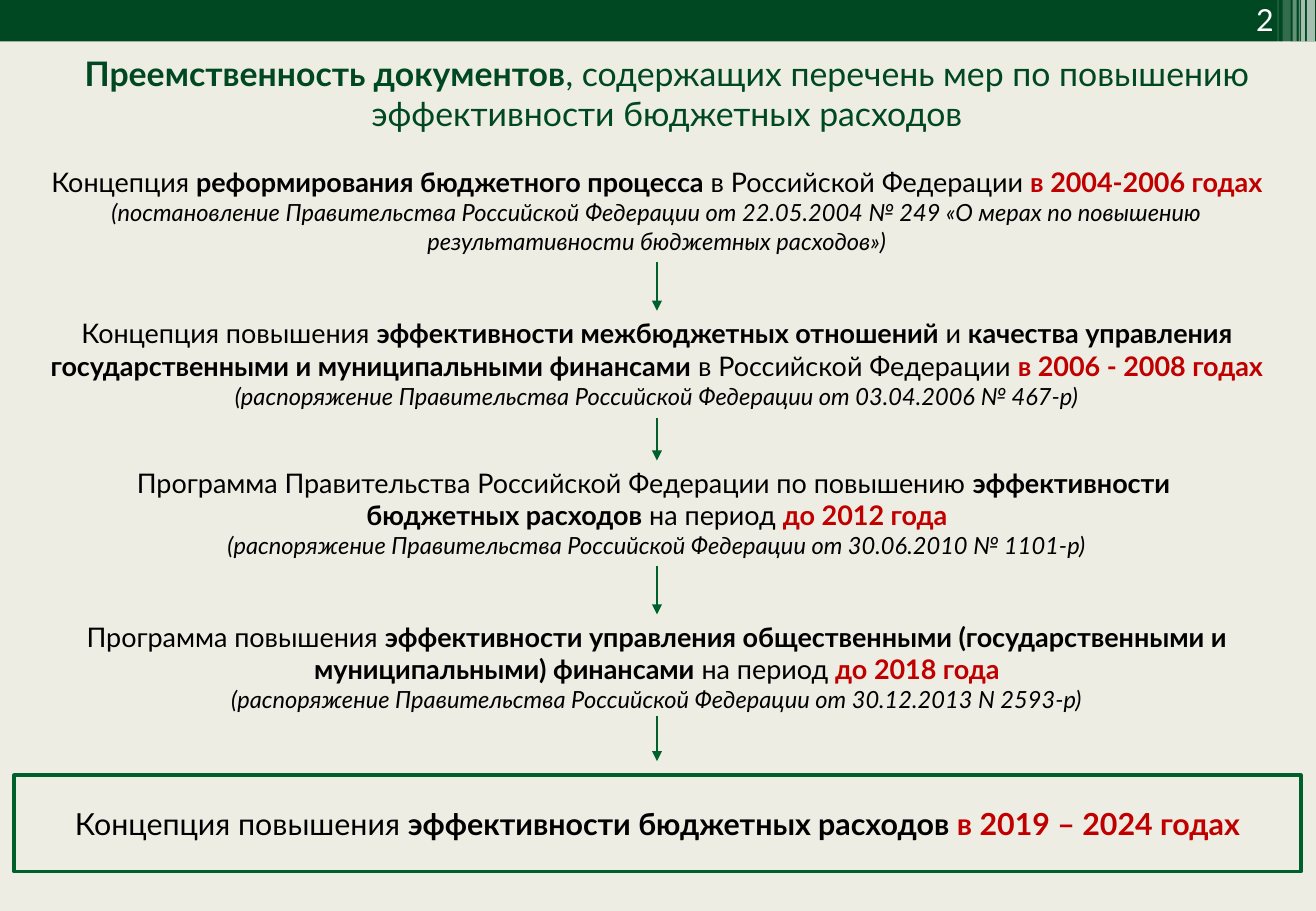
"""Build the slide on the succession of budget efficiency documents."""
import pptx
import pptx.dml.color
import pptx.enum.shapes
import pptx.enum.text
import pptx.oxml.ns
import pptx.util
from lxml import etree

PX = 7620
FONT = "Lato"
GREEN, LINE, BLACK, RED, WHITE = "004821", "00602B", "000000", "C00000", "FFFFFF"
ALIGN = pptx.enum.text.PP_ALIGN
ANCHOR = pptx.enum.text.MSO_ANCHOR
RECT = pptx.enum.shapes.MSO_SHAPE.RECTANGLE
qn = pptx.oxml.ns.qn


def rgb(value):
    return pptx.dml.color.RGBColor.from_string(value)


def write(tf, paragraphs, align=ALIGN.CENTER, anchor=ANCHOR.TOP):
    tf.word_wrap = True
    tf.auto_size = pptx.enum.text.MSO_AUTO_SIZE.NONE
    tf.vertical_anchor = anchor
    for i, (size, italic, runs) in enumerate(paragraphs):
        p = tf.add_paragraph() if i else tf.paragraphs[0]
        p.alignment = align
        for text, bold, color in runs:
            r = p.add_run()
            r.text = text
            r.font.name = FONT
            r.font.size = pptx.util.Pt(size)
            r.font.bold = bold
            r.font.italic = italic
            r.font.color.rgb = rgb(color)


prs = pptx.Presentation()
prs.slide_width, prs.slide_height = 1300 * PX, 900 * PX
s = prs.slides.add_slide(prs.slide_layouts[5])
s.background.fill.solid()
s.background.fill.fore_color.rgb = rgb("EDEDE3")

header = [
    (0, 1300, 41, GREEN, 100),
    (1291, 8, 41, WHITE, 65),
    (1285, 4, 41, WHITE, 65),
    (1283, 1, 41, WHITE, 60),
    (1277, 4, 41, WHITE, 40),
    (1267, 8, 43, WHITE, 20),
    (1262, 1, 43, WHITE, 30),
]
for x, w, h, color, opacity in header:
    sp = s.shapes.add_shape(RECT, x * PX, 0, w * PX, h * PX)
    sp.shadow.inherit = False
    sp.line.fill.background()
    sp.fill.solid()
    sp.fill.fore_color.rgb = rgb(color)
    if opacity < 100:
        clr = sp.fill._xPr.find(qn("a:solidFill"))[0]
        etree.SubElement(clr, qn("a:alpha")).set("val", str(opacity * 1000))

number = s.shapes.add_textbox(1162 * PX, -5 * PX, 108 * PX, 48 * PX)
write(number.text_frame, [(18, False, [("2", False, WHITE)])], ALIGN.RIGHT, ANCHOR.BOTTOM)

title = s.shapes.title
title.left, title.top, title.width, title.height = 16 * PX, 46 * PX, 1286 * PX, 92 * PX
write(title.text_frame, [(20, False, [
    ("Преемственность документов", True, GREEN),
    (", содержащих перечень мер по повышению эффективности бюджетных расходов", False, GREEN),
])])

documents = [
    (158, [
        (16, False, [
            ("Концепция ", False, BLACK),
            ("реформирования бюджетного процесса ", True, BLACK),
            ("в Российской Федерации ", False, BLACK),
            ("в 2004-2006 годах", True, RED),
        ]),
        (14, True, [("(постановление Правительства Российской Федерации от 22.05.2004 № 249 "
                     "«О мерах по повышению результативности бюджетных расходов»)", False, BLACK)]),
    ]),
    (307, [
        (16, False, [
            ("Концепция повышения ", False, BLACK),
            ("эффективности межбюджетных отношений ", True, BLACK),
            ("и ", False, BLACK),
            ("качества управления государственными и муниципальными финансами", True, BLACK),
            (" в Российской Федерации ", False, BLACK),
            ("в 2006 - 2008 годах", True, RED),
        ]),
        (14, True, [("(распоряжение Правительства Российской Федерации от 03.04.2006 № 467-р)",
                     False, BLACK)]),
    ]),
    (455, [
        (16, False, [
            ("Программа Правительства Российской Федерации по повышению ", False, BLACK),
            ("эффективности ", True, BLACK),
        ]),
        (16, False, [
            ("бюджетных расходов", True, BLACK),
            (" на период ", False, BLACK),
            ("до 2012 года", True, RED),
        ]),
        (14, True, [("(распоряжение Правительства Российской Федерации от 30.06.2010 № 1101-р)",
                     False, BLACK)]),
    ]),
    (607, [
        (16, False, [
            ("Программа повышения ", False, BLACK),
            ("эффективности управления общественными (государственными и муниципальными) финансами",
             True, BLACK),
            (" на период ", False, BLACK),
            ("до 2018 года", True, RED),
        ]),
        (14, True, [("(распоряжение Правительства Российской Федерации от 30.12.2013 N 2593-р)",
                     False, BLACK)]),
    ]),
]
for y, paragraphs in documents:
    box = s.shapes.add_textbox(13 * PX, y * PX, 1272 * PX, 106 * PX)
    write(box.text_frame, paragraphs)

goal = s.shapes.add_shape(RECT, 14 * PX, 766 * PX, 1271 * PX, 95 * PX)
goal.shadow.inherit = False
goal.fill.background()
goal.line.color.rgb = rgb(LINE)
goal.line.width = pptx.util.Pt(2.25)
write(goal.text_frame, [(18, False, [
    ("Концепция повышения ", False, BLACK),
    ("эффективности бюджетных расходов ", True, BLACK),
    ("в 2019 – 2024 годах", True, RED),
])], anchor=ANCHOR.MIDDLE)

for start, end in [(259, 307), (413, 455), (559, 607), (707, 752)]:
    arrow = s.shapes.add_connector(
        pptx.enum.shapes.MSO_CONNECTOR.STRAIGHT, 649 * PX, start * PX, 649 * PX, end * PX)
    arrow.line.color.rgb = rgb(LINE)
    arrow.line.width = pptx.util.Pt(1.5)
    etree.SubElement(arrow.line._get_or_add_ln(), qn("a:tailEnd")).set("type", "triangle")
    etree.SubElement(arrow._element.spPr, qn("a:effectLst"))

prs.save("out.pptx")
